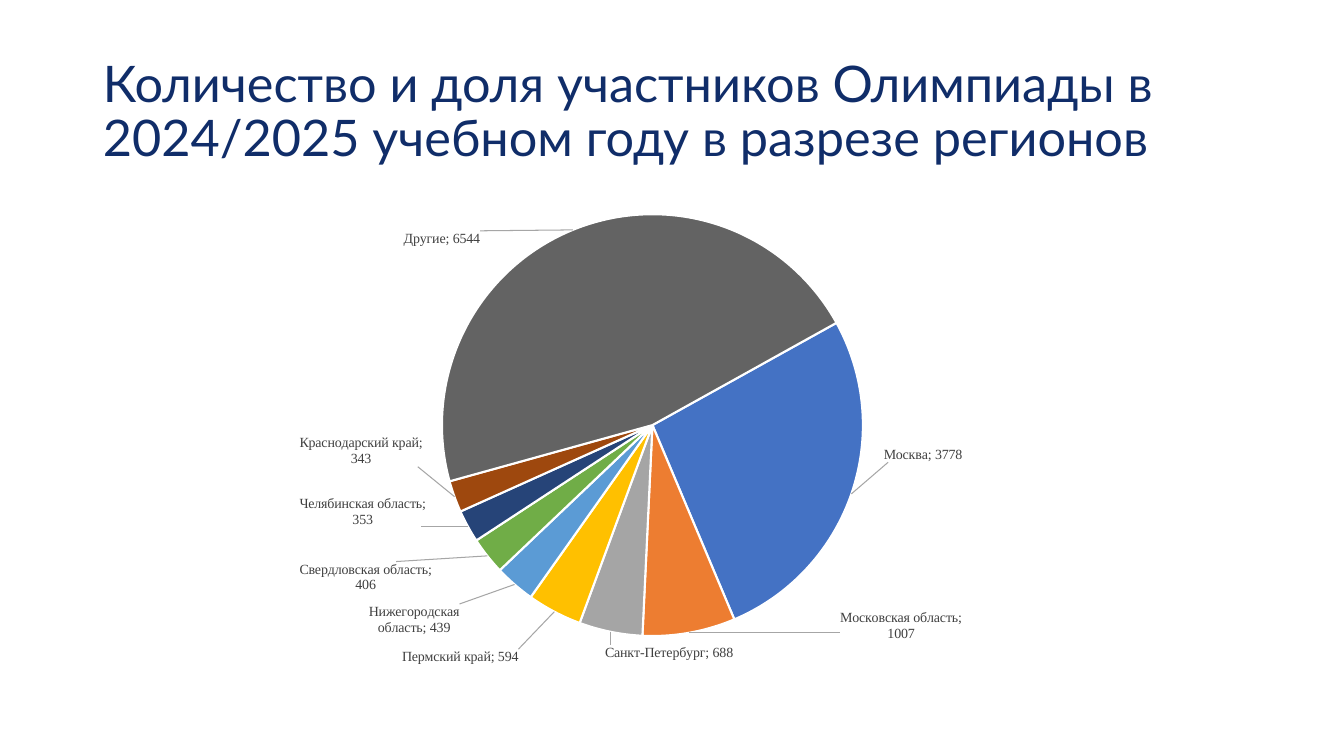
import pptx
import pptx.chart.data
import pptx.dml.color
import pptx.enum.chart
import pptx.enum.text
import pptx.oxml
import pptx.oxml.ns
import pptx.util

Inches = pptx.util.Inches
Pt = pptx.util.Pt
RGBColor = pptx.dml.color.RGBColor

NAVY = RGBColor(0x10, 0x2D, 0x69)
WHITE = RGBColor(0xFF, 0xFF, 0xFF)
LABEL_GRAY = RGBColor(0x40, 0x40, 0x40)
LEADER_GRAY = RGBColor(0xA6, 0xA6, 0xA6)

TITLE = "Количество и доля участников Олимпиады в 2024/2025 учебном году в разрезе регионов"
# Region, participants, slice colour, label shift in inches (right, down)
REGIONS = [
    ("Москва", 3778, RGBColor(0x44, 0x72, 0xC4), (0.31, -0.49)),
    ("Московская область", 1007, RGBColor(0xED, 0x7D, 0x31), (1.49, -0.28)),
    ("Санкт-Петербург", 688, RGBColor(0xA5, 0xA5, 0xA5), (1.23, 0.07)),
    ("Пермский край", 594, RGBColor(0xFF, 0xC0, 0x00), (-0.33, 0.32)),
    ("Нижегородская область", 439, RGBColor(0x5B, 0x9B, 0xD5), (-0.51, 0.15)),
    ("Свердловская область", 406, RGBColor(0x70, 0xAD, 0x47), (-0.86, 0.02)),
    ("Челябинская область", 353, RGBColor(0x26, 0x44, 0x78), (-0.41, -0.33)),
    ("Краснодарский край", 343, RGBColor(0x9E, 0x48, 0x0E), (-0.31, -0.63)),
    ("Другие", 6544, RGBColor(0x63, 0x63, 0x63), (-0.9, 0.22)),
]


def chart_xml(content):
    """Parse one chart element, given without its c: and a: declarations."""
    name, rest = content[:-1].split(">", 1) if content.endswith("/>>") else (None, content)
    head = rest.index(">")
    if rest[head - 1] == "/":
        head -= 1
    return pptx.oxml.parse_xml(rest[:head] + " " + pptx.oxml.ns.nsdecls("c", "a") + rest[head:])


def manual_layout(target="", **fractions):
    values = "".join(f'<c:{key} val="{value:.4f}"/>' for key, value in fractions.items())
    return chart_xml(f"<c:layout><c:manualLayout>{target}{values}</c:manualLayout></c:layout>")


class Slide:
    title_font = "Lato"
    chart_font = "Calibri"
    label_font = "Times New Roman"

    def __init__(self, deck):
        self.page = deck.slides.add_slide(deck.slide_layouts[5])

    def title(self, text, left, top, width, height):
        box = self.page.shapes.title
        box.left, box.top = Inches(left), Inches(top)
        box.width, box.height = Inches(width), Inches(height)
        frame = box.text_frame
        frame.text = text
        frame.word_wrap = True
        frame.auto_size = pptx.enum.text.MSO_AUTO_SIZE.NONE
        frame.vertical_anchor = pptx.enum.text.MSO_ANCHOR.MIDDLE
        para = frame.paragraphs[0]
        para.alignment = pptx.enum.text.PP_ALIGN.LEFT
        para.line_spacing = 0.9
        para.font.name = self.title_font
        para.font.size = Pt(36)
        para.font.color.rgb = NAVY

    def pie(self, regions, left, top, width, height, start_angle):
        data = pptx.chart.data.CategoryChartData()
        data.categories = [region[0] for region in regions]
        data.add_series("Series 1", [region[1] for region in regions])
        chart = self.page.shapes.add_chart(
            pptx.enum.chart.XL_CHART_TYPE.PIE,
            Inches(left), Inches(top), Inches(width), Inches(height), data).chart
        chart.has_title = False
        chart.has_legend = False
        chart.font.name = self.chart_font
        chart.font.size = Pt(10)

        plot = chart.plots[0]
        plot.vary_by_categories = True
        series = plot.series[0]
        self.style_labels(series.data_labels)
        for index, (_, _, color, (right, down)) in enumerate(regions):
            point = series.points[index]
            point.format.fill.solid()
            point.format.fill.fore_color.rgb = color
            point.format.line.color.rgb = WHITE
            point.format.line.width = Pt(1.5)
            self.style_label(point.data_label)
            label = series._element.xpath(f"c:dLbls/c:dLbl[c:idx/@val='{index}']")[0]
            label.xpath("c:idx")[0].addnext(manual_layout(x=right / width, y=down / height))
            self.show_name_and_value(label)

        labels = series._element.xpath("c:dLbls")[0]
        self.show_name_and_value(labels)
        for old in labels.xpath("c:showLeaderLines"):
            labels.remove(old)
        labels.append(chart_xml('<c:showLeaderLines val="1"/>'))
        labels.append(chart_xml(
            '<c:leaderLines><c:spPr><a:ln w="9525"><a:solidFill>'
            f'<a:srgbClr val="{LEADER_GRAY}"/></a:solidFill></a:ln></c:spPr></c:leaderLines>'))

        pie = series._element.getparent()
        for old in pie.xpath("c:firstSliceAng"):
            pie.remove(old)
        pie.append(chart_xml(f'<c:firstSliceAng val="{start_angle}"/>'))
        area = pie.getparent()
        for old in area.xpath("c:layout"):
            area.remove(old)
        area.insert(0, manual_layout(
            '<c:layoutTarget val="inner"/><c:xMode val="edge"/><c:yMode val="edge"/>',
            x=0.215, y=0.055, w=0.635, h=0.845))

    def style_labels(self, labels):
        labels.position = pptx.enum.chart.XL_LABEL_POSITION.OUTSIDE_END
        labels.font.name = self.label_font
        labels.font.size = Pt(10)
        labels.font.color.rgb = LABEL_GRAY

    style_label = style_labels

    def show_name_and_value(self, labels):
        for name in ("showVal", "showCatName"):
            labels.xpath(f"c:{name}")[0].set("val", "1")
        labels.xpath("c:showBubbleSize")[0].addnext(chart_xml("<c:separator>; </c:separator>"))
        for body in labels.xpath("c:txPr/a:bodyPr"):
            body.set("wrap", "square")


def main():
    deck = pptx.Presentation()
    deck.slide_width, deck.slide_height = Inches(13.33), Inches(7.5)
    slide = Slide(deck)
    slide.title(TITLE, 0.92, 0.4, 11.5, 1.45)
    slide.pie(REGIONS, 2.97, 1.85, 6.59, 4.96, start_angle=61)
    deck.save("out.pptx")


if __name__ == "__main__":
    main()
